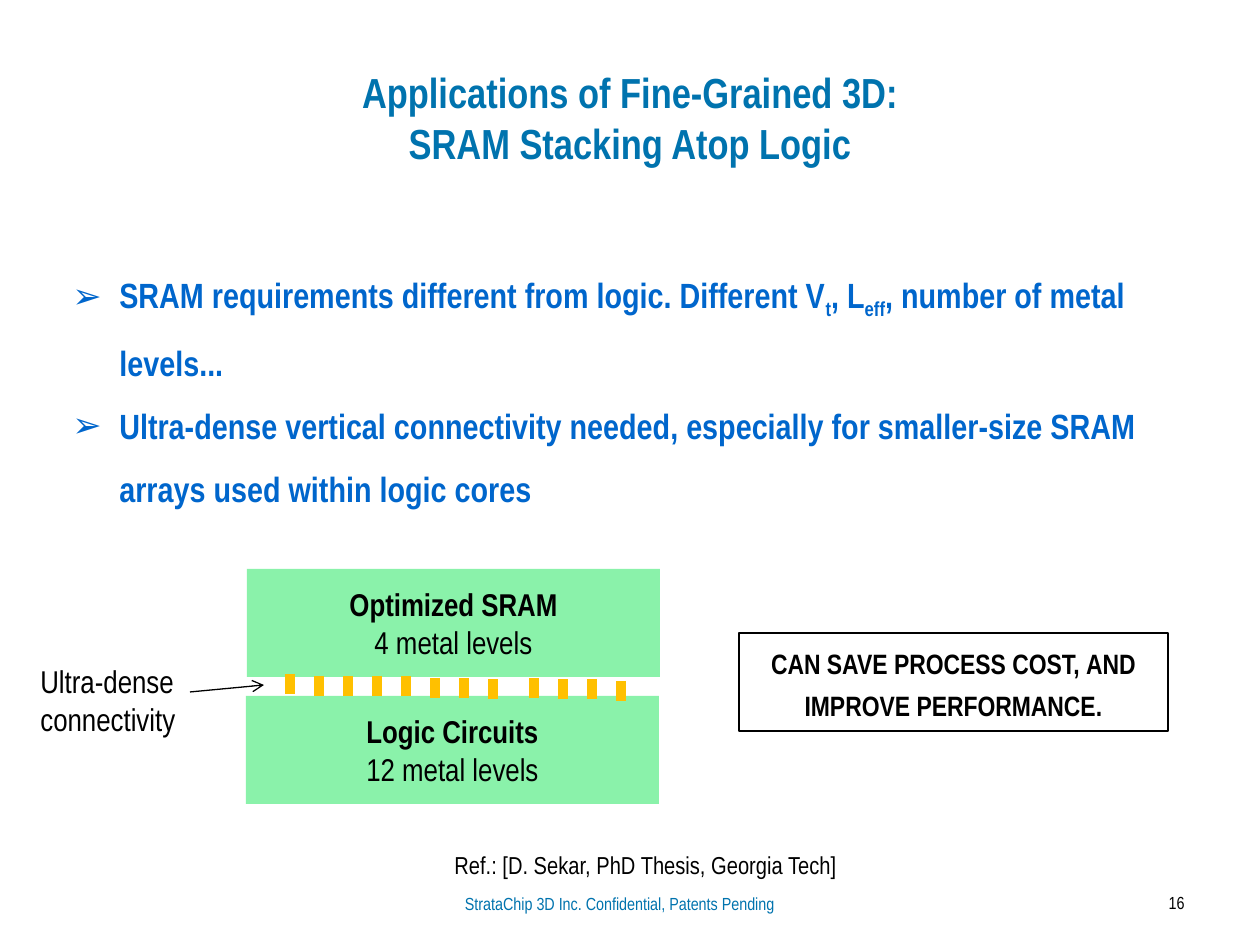
from dataclasses import dataclass
from typing import NamedTuple

from lxml.etree import SubElement
from pptx import Presentation
from pptx.dml.color import RGBColor
from pptx.enum.shapes import MSO_CONNECTOR, MSO_SHAPE
from pptx.enum.text import MSO_ANCHOR, PP_ALIGN
from pptx.oxml.ns import qn
from pptx.util import Emu, Pt

FONT = "Arial Narrow"
TEAL = RGBColor(0x00, 0x73, 0xAE)
BLUE = RGBColor(0x00, 0x66, 0xCC)
BLACK = RGBColor(0x00, 0x00, 0x00)
GREEN = RGBColor(0x8A, 0xF2, 0xAA)
GOLD = RGBColor(0xFF, 0xC0, 0x00)
LEFT, MID, RIGHT = PP_ALIGN.LEFT, PP_ALIGN.CENTER, PP_ALIGN.RIGHT


def px(n: int) -> Emu:
    return Emu(round(n * 914400 / 126))


class Run(NamedTuple):
    text: str
    bold: bool = False
    sub: bool = False
    caps: bool = False


class Box(NamedTuple):
    x: int
    y: int
    w: int
    h: int


@dataclass
class Block:
    box: Box
    paras: list[list[Run]]
    size: int
    color: RGBColor = BLACK
    align: PP_ALIGN = LEFT
    anchor: MSO_ANCHOR = MSO_ANCHOR.TOP
    bullet: bool = False
    shape: bool = False
    fill: RGBColor | None = None
    line: RGBColor | None = None


def add_run(para, run: Run, block: Block) -> None:
    for i, part in enumerate(run.text.split("\n")):
        if i:
            para.add_line_break()
        item = para.add_run()
        item.text = part
        font = item.font
        font.name, font.size, font.bold = FONT, Pt(block.size), run.bold
        font.color.rgb = block.color
        props = item._r.get_or_add_rPr()
        if run.sub:
            props.set("baseline", "-25000")
        if run.caps:
            props.set("cap", "small")


def add_bullet(para) -> None:
    para.line_spacing = 1.5
    props = para._p.get_or_add_pPr()
    props.set("marL", str(px(47)))
    props.set("indent", str(-px(47)))
    SubElement(props, qn("a:buFont")).set("typeface", "Arial")
    SubElement(props, qn("a:buChar")).set("char", "➢")


def draw_block(slide, block: Block) -> None:
    area = [px(n) for n in block.box]
    if block.shape:
        shape = slide.shapes.add_shape(MSO_SHAPE.RECTANGLE, *area)
        shape.shadow.inherit = False
        if block.fill is None:
            shape.fill.background()
        else:
            shape.fill.solid()
            shape.fill.fore_color.rgb = block.fill
        if block.line is None:
            shape.line.fill.background()
        else:
            shape.line.color.rgb = block.line
            shape.line.width = Pt(0.75)
    else:
        shape = slide.shapes.add_textbox(*area)
    frame = shape.text_frame
    frame.word_wrap = True
    frame.vertical_anchor = block.anchor
    for i, runs in enumerate(block.paras):
        para = frame.add_paragraph() if i else frame.paragraphs[0]
        para.alignment = block.align
        if block.bullet:
            add_bullet(para)
        for run in runs:
            add_run(para, run, block)


def draw_line(slide, start: tuple[int, int], end: tuple[int, int],
              color: RGBColor, width: float, arrow: bool = False) -> None:
    line = slide.shapes.add_connector(
        MSO_CONNECTOR.STRAIGHT, *(px(n) for n in start + end))
    line.line.color.rgb = color
    line.line.width = Pt(width)
    if arrow:
        SubElement(line.line._get_or_add_ln(), qn("a:tailEnd")).set("type", "arrow")
    SubElement(line._element.spPr, qn("a:effectLst"))


def layer(box: Box, name: str, note: str) -> Block:
    """One green layer of the chip stack."""
    return Block(box, [[Run(name, bold=True)], [Run(note)]], 18, align=MID,
                 anchor=MSO_ANCHOR.MIDDLE, shape=True, fill=GREEN)


TITLE = Block(
    Box(63, 38, 1134, 158),
    [[Run("Applications of Fine-Grained 3D:\nSRAM Stacking Atop Logic", bold=True)]],
    24, TEAL, MID, MSO_ANCHOR.MIDDLE)
POINTS = Block(
    Box(60, 243, 1134, 645),
    [[Run("SRAM requirements different from logic. Different V", bold=True),
      Run("t", bold=True, sub=True),
      Run(", L", bold=True),
      Run("eff", bold=True, sub=True),
      Run(", number of metal levels...", bold=True)],
     [Run("Ultra-dense vertical connectivity needed, especially for "
          "smaller-size SRAM arrays used within logic cores", bold=True)]],
    20, BLUE, bullet=True)
FOOTER = Block(
    Box(420, 887, 399, 33),
    [[Run("StrataChip 3D Inc. Confidential, Patents Pending")]], 10, TEAL, MID)
NUMBER = Block(Box(1057, 886, 140, 42), [[Run("16")]], 10, align=RIGHT)
LOGIC = layer(Box(246, 696, 413, 108), "Logic Circuits", "12 metal levels")
SRAM = layer(Box(247, 569, 413, 108), "Optimized SRAM", "4 metal levels")
CLAIM = Block(
    Box(739, 633, 429, 98),
    [[Run("can save process cost, and improve performance.", bold=True, caps=True)]],
    20, align=MID, shape=True, line=BLACK)
LABEL = Block(Box(28, 656, 194, 90), [[Run("Ultra-dense connectivity")]], 18)
SOURCE = Block(
    Box(442, 844, 646, 43), [[Run("Ref.: [D. Sekar, PhD Thesis, Georgia Tech]")]], 14)

PITCH, TALL = 29, 20
# Left end of each group of vias, and the top of every via in it
VIAS = [(290, [674, 676, 676, 676, 676, 678, 678, 679]),
        (534, [678, 679, 679, 681])]


def main() -> None:
    deck = Presentation()
    deck.slide_width, deck.slide_height = px(1260), px(945)
    slide = deck.slides.add_slide(deck.slide_layouts[6])
    for block in (TITLE, POINTS, FOOTER, NUMBER, LOGIC, SRAM):
        draw_block(slide, block)
    for left, tops in VIAS:
        for i, top in enumerate(tops):
            x = left + i * PITCH
            draw_line(slide, (x, top), (x, top + TALL), GOLD, 6)
    for block in (CLAIM, LABEL, SOURCE):
        draw_block(slide, block)
    draw_line(slide, (190, 692), (264, 685), BLACK, 0.75, arrow=True)
    deck.save("out.pptx")


if __name__ == "__main__":
    main()
